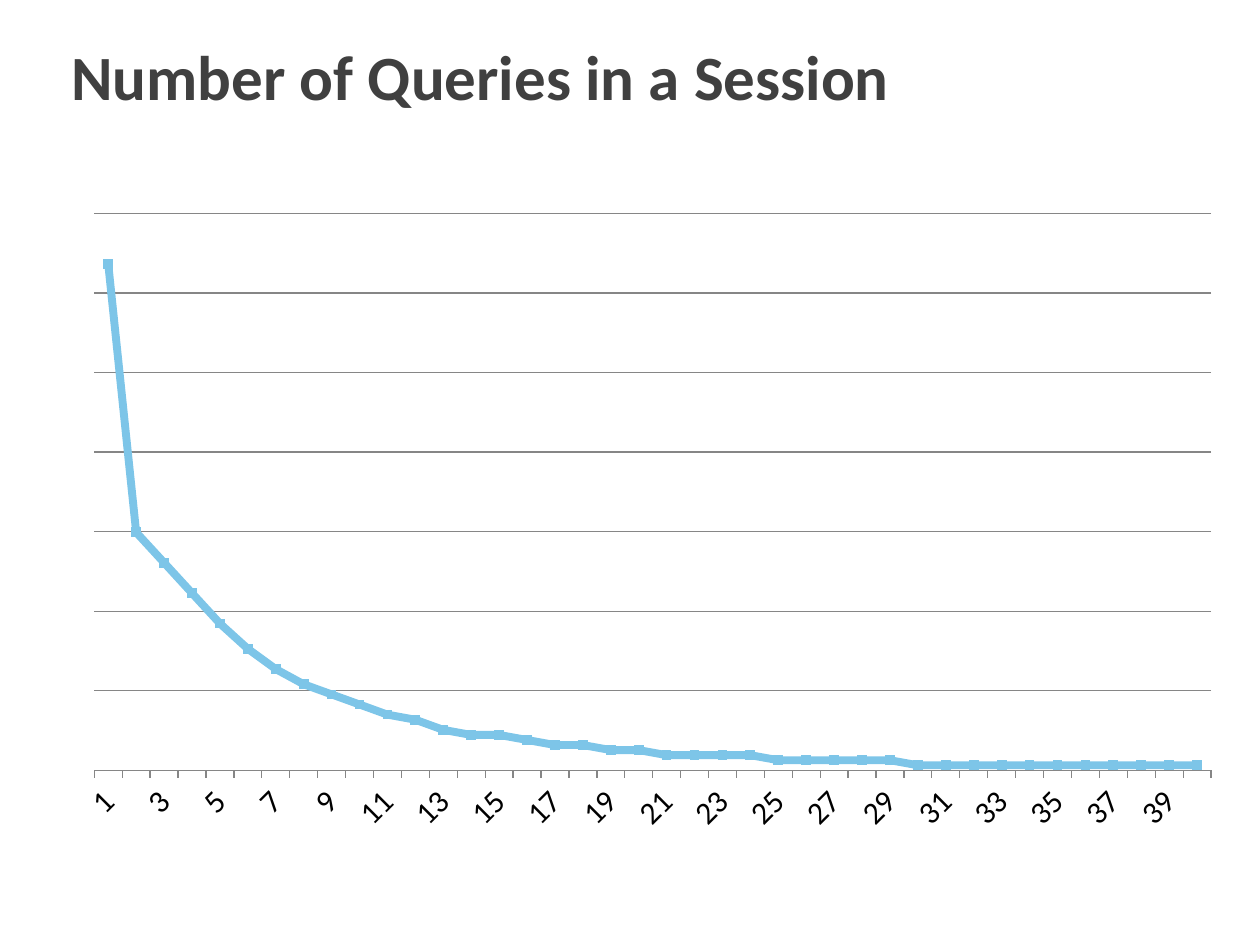
from dataclasses import dataclass

import pptx
import pptx.chart.data
import pptx.dml.color
import pptx.enum.chart
import pptx.enum.text
import pptx.oxml
import pptx.oxml.ns
import pptx.util
from pptx.util import Cm

qn = pptx.oxml.ns.qn
RGB = pptx.dml.color.RGBColor.from_string


@dataclass(frozen=True)
class Theme:
    font: str = "Calibri"
    title_color: str = "404040"
    label_color: str = "000000"
    line_color: str = "7DC5E8"
    grid_color: str = "868686"
    title_size: int = 36
    label_size: int = 18


@dataclass(frozen=True)
class Box:
    left: float
    top: float
    width: float
    height: float

    def lengths(self) -> tuple:
        return Cm(self.left), Cm(self.top), Cm(self.width), Cm(self.height)


THEME = Theme()
TITLE_BOX = Box(1.19, 0.53, 23.7, 1.96)
CHART_BOX = Box(1.19, 4.04, 23.7, 13.06)
PLOT_SHARE = {"x": 0.03, "y": 0.02, "w": 0.95, "h": 0.86}
QUERY_SHARES = [100, 47, 41, 35, 29, 24, 20, 17, 15, 13, 11, 10, 8, 7, 7, 6,
                5, 5, 4, 4] + [3] * 4 + [2] * 5 + [1] * 11
AXIS_MAX = 110
GRID_STEPS = 7


def style_font(font, size: int, color: str, bold: bool = False) -> None:
    font.name = THEME.font
    font.size = pptx.util.Pt(size)
    font.bold = bold
    font.color.rgb = RGB(color)


def add_text(s, box: Box, text: str, *, size: int, color: str, bold: bool = False) -> None:
    tf = s.shapes.add_textbox(*box.lengths()).text_frame
    tf.word_wrap = True
    tf.vertical_anchor = pptx.enum.text.MSO_ANCHOR.MIDDLE
    r = tf.paragraphs[0].add_run()
    r.text = text
    style_font(r.font, size, color, bold)


def place_plot(chart) -> None:
    """Fix the inner plot area as shares of the chart frame."""
    area = chart._chartSpace.find(".//" + qn("c:plotArea"))
    for old in area.findall(qn("c:layout")):
        area.remove(old)
    parts = '<c:layoutTarget val="inner"/><c:xMode val="edge"/><c:yMode val="edge"/>'
    parts += "".join(f'<c:{k} val="{v}"/>' for k, v in PLOT_SHARE.items())
    area.insert(0, pptx.oxml.parse_xml(
        f'<c:layout {pptx.oxml.ns.nsdecls("c")}><c:manualLayout>{parts}'
        "</c:manualLayout></c:layout>"))


def style_category_axis(axis) -> None:
    axis.major_tick_mark = pptx.enum.chart.XL_TICK_MARK.OUTSIDE
    axis.has_major_gridlines = False
    axis.format.line.color.rgb = RGB(THEME.grid_color)
    style_font(axis.tick_labels.font, THEME.label_size, THEME.label_color)
    axis._element.find(qn("c:txPr")).find(qn("a:bodyPr")).set("rot", "-2700000")
    # Every second label, with a tick for each category
    last = axis._element.find(qn("c:noMultiLvlLbl"))
    for tag, step in (("tickLblSkip", 2), ("tickMarkSkip", 1)):
        last.addprevious(pptx.oxml.parse_xml(
            f'<c:{tag} {pptx.oxml.ns.nsdecls("c")} val="{step}"/>'))


def style_value_axis(axis) -> None:
    axis.minimum_scale = 0
    axis.maximum_scale = AXIS_MAX
    axis.major_unit = AXIS_MAX / GRID_STEPS
    axis.has_major_gridlines = True
    axis.major_gridlines.format.line.color.rgb = RGB(THEME.grid_color)
    axis.visible = False


def style_series(series) -> None:
    series.smooth = False
    series.format.line.color.rgb = RGB(THEME.line_color)
    series.format.line.width = pptx.util.Pt(4.5)
    marker = series.marker
    marker.style = pptx.enum.chart.XL_MARKER_STYLE.SQUARE
    marker.size = 5
    marker.format.fill.solid()
    marker.format.fill.fore_color.rgb = RGB(THEME.line_color)
    marker.format.line.color.rgb = RGB(THEME.line_color)


def add_query_chart(s) -> None:
    data = pptx.chart.data.CategoryChartData()
    data.categories = [str(n) for n in range(1, len(QUERY_SHARES) + 1)]
    data.add_series("Series 1", QUERY_SHARES)
    chart = s.shapes.add_chart(
        pptx.enum.chart.XL_CHART_TYPE.LINE_MARKERS, *CHART_BOX.lengths(), data).chart
    chart.has_legend = False
    chart.has_title = False
    style_font(chart.font, THEME.label_size, THEME.label_color)
    chart.plots[0].vary_by_categories = False
    place_plot(chart)
    style_category_axis(chart.category_axis)
    style_value_axis(chart.value_axis)
    style_series(chart.plots[0].series[0])


def main() -> None:
    prs = pptx.Presentation()
    prs.slide_width, prs.slide_height = Cm(25.4), Cm(19.05)
    s = prs.slides.add_slide(prs.slide_layouts[6])
    # Title
    add_text(s, TITLE_BOX, "Number of Queries in a Session",
             size=THEME.title_size, color=THEME.title_color, bold=True)
    # Queries per session
    add_query_chart(s)
    prs.save("out.pptx")


if __name__ == "__main__":
    main()
